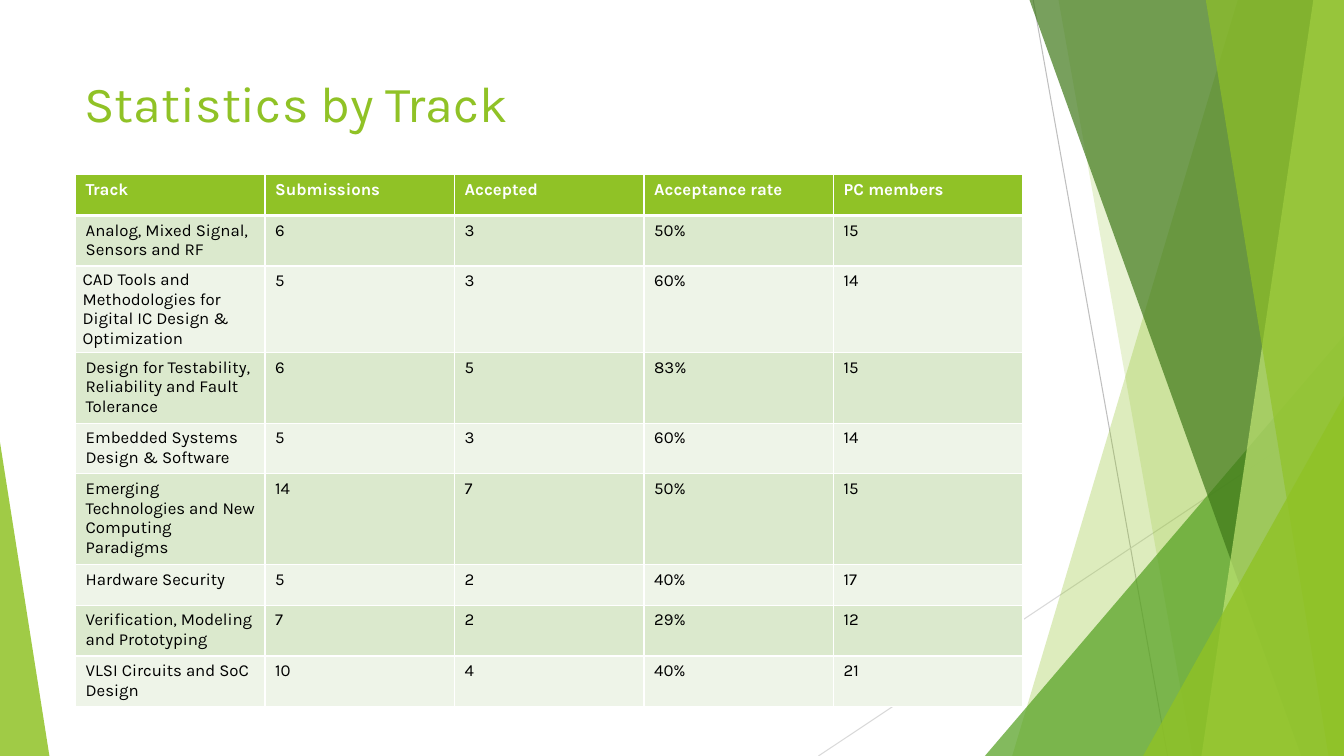
from dataclasses import dataclass

from lxml.etree import SubElement
from pptx import Presentation
from pptx.dml.color import RGBColor
from pptx.enum.shapes import MSO_CONNECTOR, MSO_SHAPE
from pptx.enum.text import MSO_ANCHOR
from pptx.oxml.ns import qn
from pptx.shapes.autoshape import Shape
from pptx.slide import Slide
from pptx.table import _Cell
from pptx.text.text import TextFrame
from pptx.util import Pt


@dataclass(frozen=True)
class Theme:
    font: str = "Karla"
    title_size: float = 36
    table_size: float = 12
    accent: str = "90C226"
    leaf: str = "54A021"
    forest: str = "3F7819"
    lime: str = "C0E474"
    white: str = "FFFFFF"
    black: str = "000000"
    band_dark: str = "DBE9CD"
    band_light: str = "EEF4E8"
    line_dark: str = "BFBFBF"
    line_light: str = "D9D9D9"


THEME = Theme()
WIDTH, HEIGHT = 960, 540
BLEED_TOP = -0.6
COLUMN_WIDTH, ROW_HEIGHT = 135.36, 29.2


@dataclass(frozen=True)
class Ray:
    start: tuple[float, float]
    end: tuple[float, float]
    color: str


@dataclass(frozen=True)
class Blade:
    """A panel that reaches the right slide edge, with a slanted left side."""
    top_x: float
    bottom_x: float
    color: str
    opacity: int


@dataclass(frozen=True)
class Corner:
    """A right triangle standing on the bottom slide edge."""
    left: float
    top: float
    width: float
    apex: float
    color: str
    opacity: int


@dataclass(frozen=True)
class Track:
    name: str
    submissions: int
    accepted: int
    rate: str
    members: int


RAYS = [
    Ray((738, 0), (834, HEIGHT), THEME.line_dark),
    Ray((WIDTH, 290), (584.6, HEIGHT), THEME.line_light),
]
PANELS = [
    Blade(884.3, 723, THEME.accent, 30),
    Blade(756, 851.8, THEME.accent, 20),
    Corner(703.5, 239.8, 256.5, 1, THEME.leaf, 72),
    Blade(735.2, 929.5, THEME.forest, 70),
    Blade(938.2, 858.2, THEME.lime, 70),
    Blade(861.2, 949, THEME.accent, 65),
    Corner(816.5, 283, 143.5, 1, THEME.accent, 80),
    Corner(0, 316, 35.3, 0, THEME.accent, 85),
]
HEADERS = ["Track", "Submissions", "Accepted", "Acceptance rate", "PC members"]
TRACKS = [
    Track("Analog, Mixed Signal, Sensors and RF", 6, 3, "50%", 15),
    Track("CAD Tools and Methodologies for Digital IC Design & Optimization", 5, 3, "60%", 14),
    Track("Design for Testability, Reliability and Fault Tolerance", 6, 5, "83%", 15),
    Track("Embedded Systems Design & Software", 5, 3, "60%", 14),
    Track("Emerging Technologies and New Computing Paradigms", 14, 7, "50%", 15),
    Track("Hardware Security", 5, 2, "40%", 17),
    Track("Verification, Modeling and Prototyping", 7, 2, "29%", 12),
    Track("VLSI Circuits and SoC Design", 10, 4, "40%", 21),
]
CAD_ROW = 2


def rgb(color: str) -> RGBColor:
    return RGBColor.from_string(color)


def write(tf: TextFrame, text: str, *, size: float, color: str, bold: bool = False) -> None:
    r = tf.paragraphs[0].add_run()
    r.text = text
    r.font.name = THEME.font
    r.font.size = Pt(size)
    r.font.bold = bold
    r.font.color.rgb = rgb(color)


def add_ray(slide: Slide, ray: Ray) -> None:
    line = slide.shapes.add_connector(
        MSO_CONNECTOR.STRAIGHT, *map(Pt, ray.start), *map(Pt, ray.end))
    line.line.color.rgb = rgb(ray.color)
    line.line.width = Pt(0.75)
    SubElement(line._element.spPr, qn("a:effectLst"))


def add_panel(slide: Slide, panel: Blade | Corner) -> None:
    if isinstance(panel, Blade):
        fb = slide.shapes.build_freeform(Pt(panel.top_x), Pt(BLEED_TOP))
        fb.add_line_segments([
            (Pt(WIDTH), Pt(BLEED_TOP)),
            (Pt(WIDTH), Pt(HEIGHT)),
            (Pt(panel.bottom_x), Pt(HEIGHT)),
        ])
        sp = fb.convert_to_shape()
    else:
        sp = slide.shapes.add_shape(
            MSO_SHAPE.ISOSCELES_TRIANGLE, Pt(panel.left), Pt(panel.top),
            Pt(panel.width), Pt(HEIGHT - panel.top))
        sp.adjustments[0] = panel.apex
    paint(sp, panel.color, panel.opacity)


def paint(sp: Shape, color: str, opacity: int) -> None:
    sp.shadow.inherit = False
    sp.line.fill.background()
    sp.fill.solid()
    sp.fill.fore_color.rgb = rgb(color)
    clr = sp._element.spPr.find(qn("a:solidFill")).find(qn("a:srgbClr"))
    SubElement(clr, qn("a:alpha"), val=str(opacity * 1000))


def style_cell(cell: _Cell, fill: str, top: float, bottom: float) -> None:
    """Set the cell fill and its white borders."""
    tcPr = cell._tc.get_or_add_tcPr()
    for side, width in (("L", 1), ("R", 1), ("T", top), ("B", bottom)):
        ln = SubElement(tcPr, qn(f"a:ln{side}"), w=str(Pt(width)))
        SubElement(SubElement(ln, qn("a:solidFill")), qn("a:srgbClr"), val=THEME.white)
    cell.fill.solid()
    cell.fill.fore_color.rgb = rgb(fill)


def add_track_table(slide: Slide) -> None:
    rows = [HEADERS] + [
        [t.name, t.submissions, t.accepted, t.rate, t.members] for t in TRACKS]
    frame = slide.shapes.add_table(
        len(rows), len(HEADERS), Pt(54), Pt(124.8),
        Pt(COLUMN_WIDTH * len(HEADERS)), Pt(ROW_HEIGHT * len(rows)))
    frame.height = Pt(365)
    table = frame.table
    table.horz_banding = False
    for i, values in enumerate(rows):
        header = i == 0
        band = THEME.band_dark if i % 2 else THEME.band_light
        for j, value in enumerate(values):
            cell = table.cell(i, j)
            style_cell(cell, THEME.accent if header else band,
                       top=3 if i == 1 else 1, bottom=3 if header else 1)
            write(cell.text_frame, str(value), size=THEME.table_size, bold=header,
                  color=THEME.white if header else THEME.black)
    cad = table.cell(CAD_ROW, 0)
    cad.vertical_anchor = MSO_ANCHOR.MIDDLE
    cad.margin_left = cad.margin_right = Pt(5)
    cad.margin_top = cad.margin_bottom = Pt(2.2)


def add_title(slide: Slide, text: str) -> None:
    tf = slide.shapes.add_textbox(Pt(53.3), Pt(48.2), Pt(676.8), Pt(103.7)).text_frame
    tf.word_wrap = True
    write(tf, text, size=THEME.title_size, color=THEME.accent)


def main() -> None:
    prs = Presentation()
    prs.slide_width, prs.slide_height = Pt(WIDTH), Pt(HEIGHT)
    slide = prs.slides.add_slide(prs.slide_layouts[6])
    for ray in RAYS:
        add_ray(slide, ray)
    for panel in PANELS:
        add_panel(slide, panel)
    add_title(slide, "Statistics by Track")
    add_track_table(slide)
    prs.save("out.pptx")


if __name__ == "__main__":
    main()
